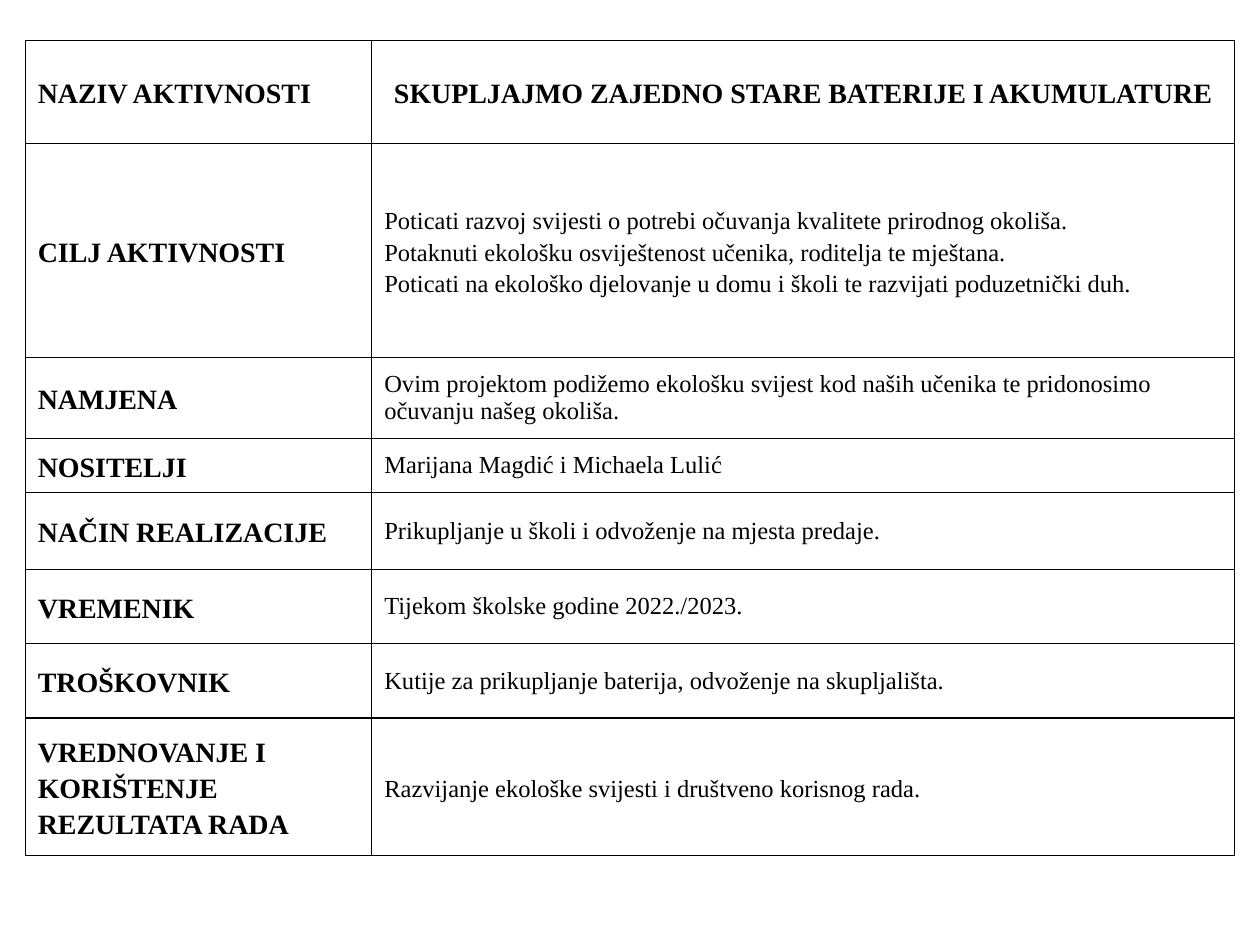
from lxml import etree
from pptx import Presentation, util as u
from pptx.dml.color import RGBColor
from pptx.enum import text
from pptx.oxml import ns

WIDE, HIGH = 10, 7.5
COLS = [2.75, 6.85]
ROWS = [
    (0.82, "NAZIV AKTIVNOSTI", "SKUPLJAJMO ZAJEDNO STARE BATERIJE I AKUMULATURE", 1.15),
    (1.7, "CILJ AKTIVNOSTI",
     "Poticati razvoj svijesti o potrebi očuvanja kvalitete prirodnog okoliša.\n"
     "Potaknuti ekološku osviještenost učenika, roditelja te mještana.\n"
     "Poticati na ekološko djelovanje u domu i školi te razvijati poduzetnički duh.", 1.15),
    (0.64, "NAMJENA",
     "Ovim projektom podižemo ekološku svijest kod naših učenika te pridonosimo "
     "očuvanju našeg okoliša.", None),
    (0.43, "NOSITELJI", "Marijana Magdić i Michaela Lulić", None),
    (0.61, "NAČIN REALIZACIJE", "Prikupljanje u školi i odvoženje na mjesta predaje.", None),
    (0.59, "VREMENIK", "Tijekom školske godine 2022./2023.", None),
    (0.59, "TROŠKOVNIK", "Kutije za prikupljanje baterija, odvoženje na skupljališta.", None),
    (1.09, "VREDNOVANJE I KORIŠTENJE REZULTATA RADA",
     "Razvijanje ekološke svijesti i društveno korisnog rada.", 1.15),
]


def tint(code):
    return RGBColor.from_string(code)


class Deck:
    font = "Times New Roman"
    ink = "000000"
    head, body = 16, 14
    rule = 0.75
    lead = 1.15

    def __init__(self):
        self.show = Presentation()
        self.show.slide_width = u.Inches(WIDE)
        self.show.slide_height = u.Inches(HIGH)
        self.slide = self.show.slides.add_slide(self.show.slide_layouts[6])

    def edge(self, cell):
        props = cell._tc.get_or_add_tcPr()
        for spot, side in enumerate(("lnL", "lnR", "lnT", "lnB")):
            line = etree.Element(ns.qn("a:" + side), w=str(u.Pt(self.rule)))
            fill = etree.SubElement(line, ns.qn("a:solidFill"))
            etree.SubElement(fill, ns.qn("a:srgbClr"), val=self.ink)
            props.insert(spot, line)

    def cell(self, cell, words, bold, lead, align):
        cell.fill.background()
        cell.vertical_anchor = text.MSO_ANCHOR.MIDDLE
        self.edge(cell)
        cell.text_frame.text = words
        for para in cell.text_frame.paragraphs:
            para.alignment = align
            para.line_spacing = lead
            for run in para.runs:
                run.font.name = self.font
                run.font.size = u.Pt(self.head if bold else self.body)
                run.font.bold = bold
                run.font.color.rgb = tint(self.ink)

    def table(self, left, top, cols, rows):
        high = sum(row[0] for row in rows)
        grid = self.slide.shapes.add_table(
            len(rows), len(cols), u.Inches(left), u.Inches(top),
            u.Inches(sum(cols)), u.Inches(high)).table
        grid.first_row = grid.horz_banding = False
        for col, width in zip(grid.columns, cols):
            col.width = u.Inches(width)
        for i, (tall, label, words, lead) in enumerate(rows):
            grid.rows[i].height = u.Inches(tall)
            top_row = i == 0
            align = text.PP_ALIGN.CENTER if top_row else text.PP_ALIGN.LEFT
            self.cell(grid.cell(i, 0), label, True, self.lead, text.PP_ALIGN.LEFT)
            self.cell(grid.cell(i, 1), words, top_row, lead, align)


def main():
    deck = Deck()
    deck.table((WIDE - sum(COLS)) / 2, 0.32, COLS, ROWS)
    deck.show.save("out.pptx")


if __name__ == "__main__":
    main()
